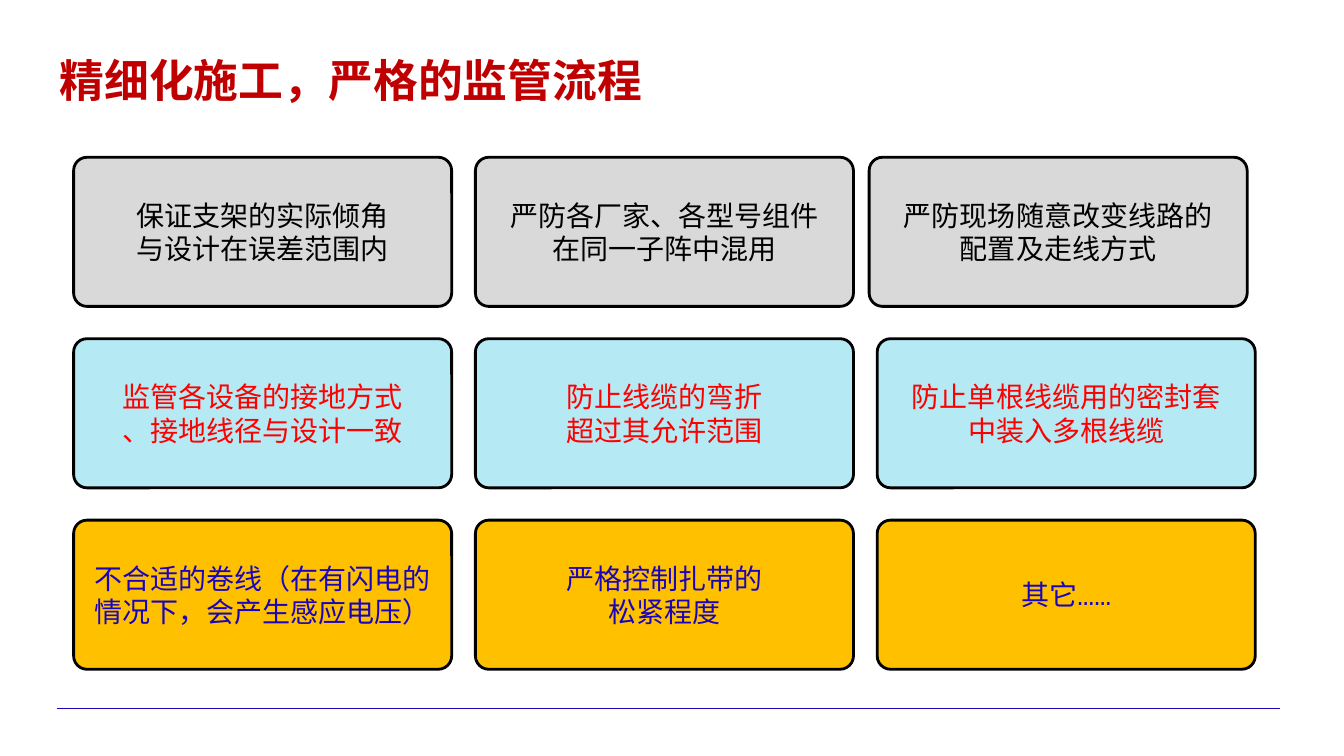
from lxml.etree import SubElement
from pptx import Presentation
from pptx.dml.color import RGBColor
from pptx.enum.shapes import MSO_CONNECTOR, MSO_SHAPE
from pptx.enum.text import MSO_ANCHOR, PP_ALIGN
from pptx.oxml.ns import qn
from pptx.util import Inches, Pt

COLORS = {
    "title": "C00000", "black": "000000", "red": "FF0000", "blue": "1B05BB",
    "gray": "D9D9D9", "cyan": "B5E9F4", "amber": "FFC000",
}
CARD_W, CARD_H = 3.75, 1.48
COL_STEP, ROW_STEP = 3.985, 1.8
ROWS = [
    ("gray", "black", [
        ["保证支架的实际倾角", "与设计在误差范围内"],
        ["严防各厂家、各型号组件", "在同一子阵中混用"],
        ["严防现场随意改变线路的", "配置及走线方式"],
    ]),
    ("cyan", "red", [
        ["监管各设备的接地方式", "、接地线径与设计一致"],
        ["防止线缆的弯折", "超过其允许范围"],
        ["防止单根线缆用的密封套", "中装入多根线缆"],
    ]),
    ("amber", "blue", [
        ["不合适的卷线（在有闪电的", "情况下，会产生感应电压）"],
        ["严格控制扎带的", "松紧程度"],
        ["其它……"],
    ]),
]
NUDGES = {(0, 2): -0.08}


def rgb(name):
    return RGBColor.from_string(COLORS[name])


def write(tf, lines, size, font, color, bold=False, align=PP_ALIGN.CENTER):
    tf.vertical_anchor = MSO_ANCHOR.MIDDLE
    for i, line in enumerate(lines):
        p = tf.paragraphs[0] if i == 0 else tf.add_paragraph()
        p.alignment = align
        r = p.add_run()
        r.text = line
        r.font.size = Pt(size)
        r.font.bold = bold
        r.font.name = font
        r.font.color.rgb = rgb(color)
        SubElement(r.font._element, qn("a:ea")).set("typeface", font)


def add_title(slide, text, x, y, w, h):
    sp = slide.shapes.title
    sp.left, sp.top, sp.width, sp.height = (Inches(v) for v in (x, y, w, h))
    write(sp.text_frame, [text], 32, "Noto Sans CJK SC", "title",
          bold=True, align=PP_ALIGN.LEFT)


def add_card(slide, lines, fill, color, x, y):
    sp = slide.shapes.add_shape(MSO_SHAPE.ROUNDED_RECTANGLE, Inches(x), Inches(y),
                                Inches(CARD_W), Inches(CARD_H))
    sp.adjustments[0] = 0.09
    sp.shadow.inherit = False
    sp.fill.solid()
    sp.fill.fore_color.rgb = rgb(fill)
    sp.line.color.rgb = rgb("black")
    sp.line.width = Pt(2)
    sp.text_frame.word_wrap = False
    write(sp.text_frame, lines, 20, "Courier New", color)


def add_card_grid(slide, x, y):
    for row, (fill, color, cards) in enumerate(ROWS):
        for col, lines in enumerate(cards):
            left = x + col * COL_STEP + NUDGES.get((row, col), 0)
            add_card(slide, lines, fill, color, left, y + row * ROW_STEP)


def add_footer_rule(slide, x1, x2, y):
    line = slide.shapes.add_connector(MSO_CONNECTOR.STRAIGHT, Inches(x1), Inches(y),
                                      Inches(x2), Inches(y))
    line.line.color.rgb = rgb("blue")
    line.line.width = Pt(0.75)
    SubElement(line._element.spPr, qn("a:effectLst"))


def main():
    prs = Presentation()
    prs.slide_width, prs.slide_height = Inches(13.33), Inches(7.5)
    slide = prs.slides.add_slide(prs.slide_layouts[5])
    add_footer_rule(slide, 0.57, 12.7, 7.03)
    add_title(slide, "精细化施工，严格的监管流程", 0.49, 0.47, 9.69, 0.64)
    add_card_grid(slide, 0.73, 1.56)
    prs.save("out.pptx")


if __name__ == "__main__":
    main()
